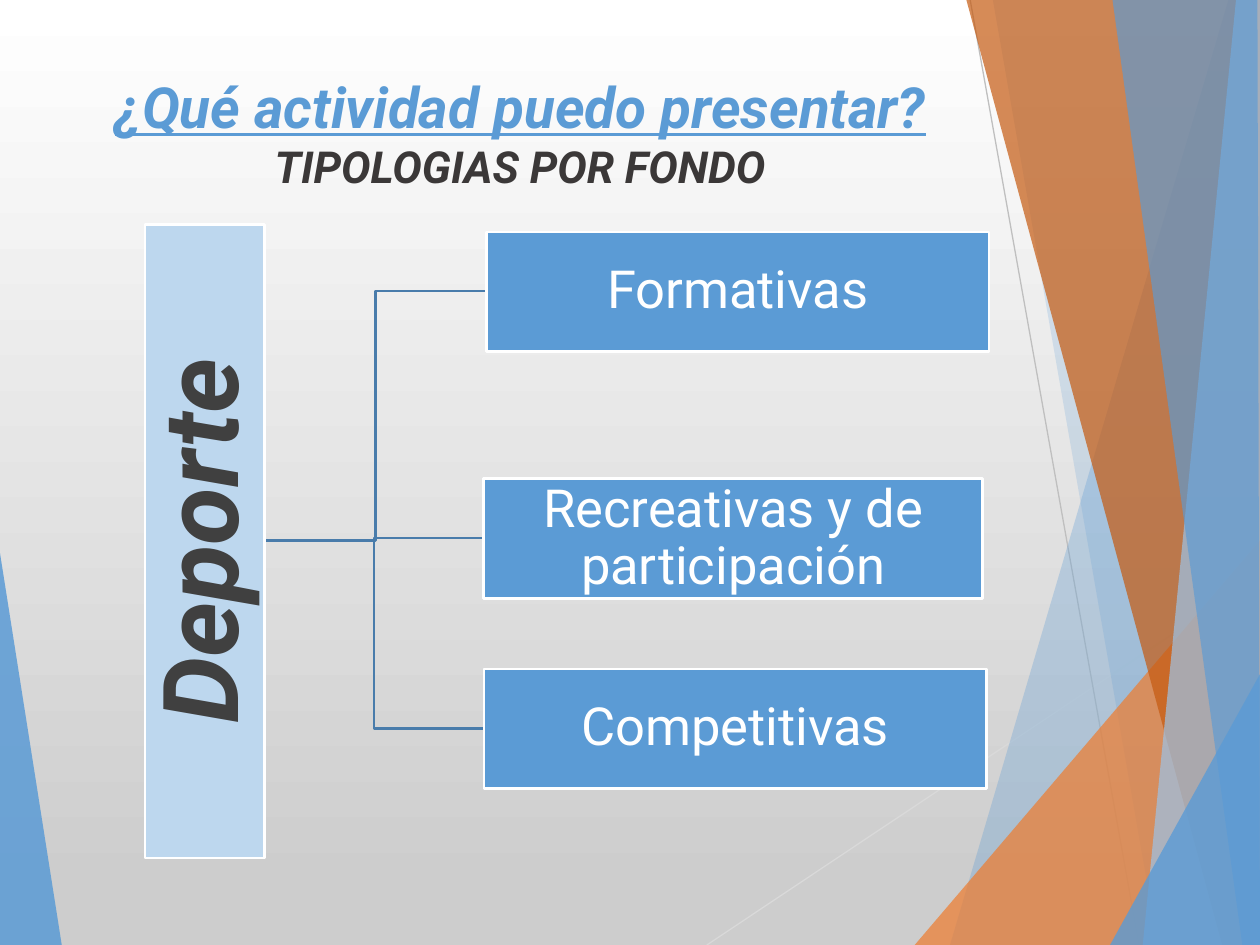
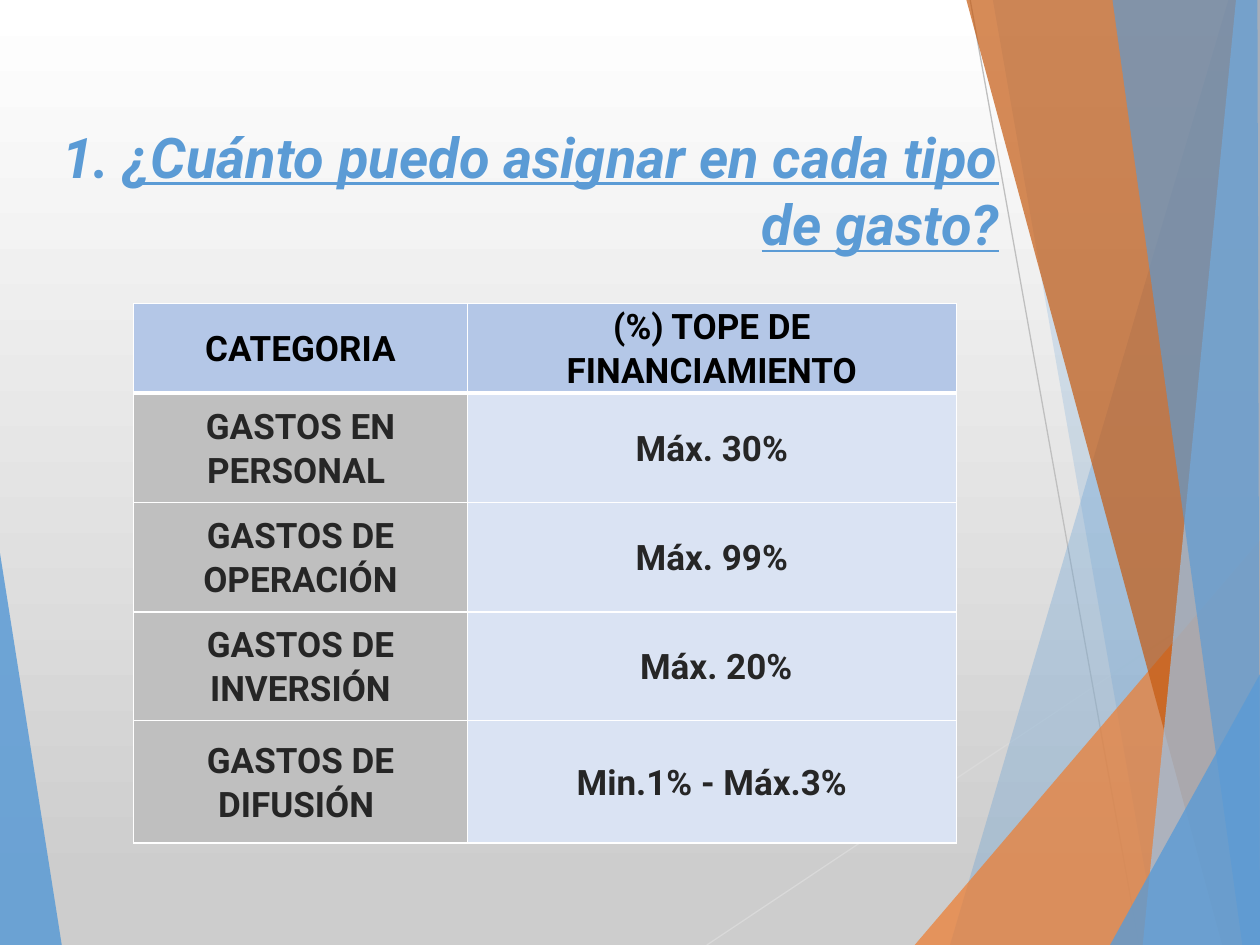
from dataclasses import dataclass

from pptx import Presentation
from pptx.dml.color import RGBColor
from pptx.enum.shapes import MSO_CONNECTOR, MSO_SHAPE
from pptx.enum.text import MSO_ANCHOR, MSO_AUTO_SIZE, PP_ALIGN
from pptx.oxml.ns import qn
from pptx.util import Pt
from lxml.etree import SubElement

EMU_PER_PX = 9144
SLIDE_WIDTH, SLIDE_HEIGHT = 1000, 750
TITLE_ONLY_LAYOUT = 5


@dataclass(frozen=True)
class Theme:
    font: str = "Roboto"
    white: str = "FFFFFF"
    black: str = "000000"
    background_end: str = "CDCDCD"
    blue: str = "5B9BD5"
    light_blue: str = "9DC3E6"
    pale_blue: str = "BDD7EE"
    orange: str = "ED7D31"
    dark_orange: str = "C55A11"
    branch: str = "497CAB"
    subtitle: str = "3B3838"
    root_text: str = "404040"
    cell_text: str = "262626"
    header_fill: str = "B4C7E7"
    category_fill: str = "BFBFBF"
    limit_fill: str = "DAE3F3"
    light_line: str = "D9D9D9"
    gray_line: str = "BFBFBF"
    title_size: float = 32
    first_title_size: float = 32.4
    subtitle_size: float = 25.2
    root_size: float = 60
    box_size: float = 30
    table_size: float = 20


THEME = Theme()

BACKDROP_LINES = [
    ((561, 750), (1000, 457), THEME.light_line),
    ((770, 0), (904, 750), THEME.gray_line),
]
LEFT_BAND = ([(0, 439), (49, 750), (0, 750)], THEME.blue, 85)
RIGHT_BANDS = [
    ([(975, 0), (754, 750), (1000, 750), (1000, 0)], THEME.blue, 30),
    ([(788, 0), (919, 750), (1000, 750), (1000, 0)], THEME.blue, 20),
    ([(726, 750), (1000, 429), (1000, 750)], THEME.orange, 72),
    ([(767, 0), (970, 750), (1000, 750), (1000, 0)], THEME.dark_orange, 70),
    ([(981, 0), (907, 750), (1000, 750), (1000, 0)], THEME.light_blue, 70),
    ([(883, 0), (986, 750), (1000, 750), (998, 0)], THEME.blue, 65),
    ([(881, 750), (1000, 535), (1000, 750)], THEME.blue, 80),
]

ROOT_BOX = (-89, 382, 503, 95)
BRANCH_START = (210, 429)
ACTIVITIES = [
    ("Competitivas", (384, 531, 399, 95)),
    ("Recreativas y de participación", (384, 380, 396, 95)),
    ("Formativas", (386, 184, 399, 95)),
]

COLUMN_WIDTHS = [265, 388]
ROW_HEIGHTS = [71, 87, 87, 86, 97]
EXPENSE_LIMITS = [
    ("CATEGORIA", "(%) TOPE DE FINANCIAMIENTO"),
    ("GASTOS EN PERSONAL ", "Máx. 30%"),
    ("GASTOS DE OPERACIÓN", "Máx. 99%"),
    ("GASTOS DE INVERSIÓN", " Máx. 20%"),
    ("GASTOS DE\nDIFUSIÓN ", "Min.1% - Máx.3%"),
]


def px(*lengths):
    return [length * EMU_PER_PX for length in lengths]


def apply_format(target, values):
    for name, value in values.items():
        setattr(target, name, value)


def format_font(font, size, color, **styles):
    apply_format(font, {"name": THEME.font, "size": Pt(size), **styles})
    font.color.rgb = RGBColor.from_string(color)


def fill_solid(fill, color, opacity=100):
    fill.solid()
    fill.fore_color.rgb = RGBColor.from_string(color)
    if opacity < 100:
        color_element = fill._xPr.find(qn("a:solidFill"))[0]
        SubElement(color_element, qn("a:alpha"), val=str(opacity * 1000))


def set_background(presentation):
    fill = presentation.slide_master.background.fill
    fill.gradient()
    fill.gradient_angle = 270
    stops = [(0, THEME.white), (0.94, THEME.background_end)]
    for stop, (position, color) in zip(fill.gradient_stops, stops):
        stop.position = position
        stop.color.rgb = RGBColor.from_string(color)


def add_line(slide, kind, start, end, color, width):
    connector = slide.shapes.add_connector(kind, *px(*start, *end))
    connector.line.color.rgb = RGBColor.from_string(color)
    connector.line.width = Pt(width)
    SubElement(connector._element.spPr, qn("a:effectLst"))


def add_band(slide, points, color, opacity):
    builder = slide.shapes.build_freeform(*points[0], scale=EMU_PER_PX)
    builder.add_line_segments(points[1:], close=True)
    band = builder.convert_to_shape()
    band.shadow.inherit = False
    band.line.fill.background()
    fill_solid(band.fill, color, opacity)


def add_backdrop(slide):
    add_band(slide, *LEFT_BAND)
    for start, end, color in BACKDROP_LINES:
        add_line(slide, MSO_CONNECTOR.STRAIGHT, start, end, color, 0.75)
    for band in RIGHT_BANDS:
        add_band(slide, *band)


def set_title(slide, bounds, alignment, runs):
    title = slide.shapes.title
    slide.shapes._spTree.append(title._element)
    apply_format(title, dict(zip(("left", "top", "width", "height"), px(*bounds))))
    apply_format(title.text_frame, {
        "word_wrap": True,
        "auto_size": MSO_AUTO_SIZE.NONE,
        "vertical_anchor": MSO_ANCHOR.TOP,
    })
    paragraph = title.text_frame.paragraphs[0]
    paragraph.alignment = alignment
    for text, size, color, underline in runs:
        if text.startswith("\n"):
            paragraph.add_line_break()
        run = paragraph.add_run()
        run.text = text.strip("\n")
        format_font(run.font, size, color, bold=True, italic=True, underline=underline)


def add_slide(presentation, *title):
    slide = presentation.slides.add_slide(presentation.slide_layouts[TITLE_ONLY_LAYOUT])
    add_backdrop(slide)
    set_title(slide, *title)
    return slide


def add_box(slide, text, bounds, fill, size, color, margin, rotation=0, **styles):
    box = slide.shapes.add_shape(MSO_SHAPE.RECTANGLE, *px(*bounds))
    box.shadow.inherit = False
    box.rotation = rotation
    fill_solid(box.fill, fill)
    box.line.color.rgb = RGBColor.from_string(THEME.white)
    box.line.width = Pt(1.5)
    frame = box.text_frame
    sides = ("margin_left", "margin_top", "margin_right", "margin_bottom")
    apply_format(frame, {
        "word_wrap": True,
        "vertical_anchor": MSO_ANCHOR.MIDDLE,
        **dict.fromkeys(sides, px(margin)[0]),
    })
    paragraph = frame.paragraphs[0]
    paragraph.text = text
    apply_format(paragraph, {"alignment": PP_ALIGN.CENTER, "line_spacing": 0.9})
    format_font(paragraph.runs[0].font, size, color, **styles)


def add_activity_tree(slide):
    for _, (left, top, _, height) in ACTIVITIES:
        end = (left, top + height // 2)
        add_line(slide, MSO_CONNECTOR.ELBOW, BRANCH_START, end, THEME.branch, 1.5)
    add_box(slide, "Deporte", ROOT_BOX, THEME.pale_blue, THEME.root_size,
            THEME.root_text, 4, rotation=270, bold=True, italic=True)
    for text, bounds in ACTIVITIES:
        add_box(slide, text, bounds, THEME.blue, THEME.box_size, THEME.white, 2)


def set_cell_borders(cell, widths):
    properties = cell._tc.get_or_add_tcPr()
    for position, (side, width) in enumerate(widths.items()):
        line = SubElement(properties, qn(f"a:{side}"), w=str(Pt(width)))
        fill = SubElement(line, qn("a:solidFill"))
        SubElement(fill, qn("a:srgbClr"), val=THEME.white)
        properties.insert(position, line)


def format_cell(cell, text, fill, color, top_border, bottom_border):
    margin = px(2)[0]
    apply_format(cell, {
        "text": text,
        "vertical_anchor": MSO_ANCHOR.MIDDLE,
        "margin_left": margin,
        "margin_right": margin,
        "margin_top": 0,
        "margin_bottom": 0,
    })
    for paragraph in cell.text_frame.paragraphs:
        apply_format(paragraph, {"alignment": PP_ALIGN.CENTER, "line_spacing": 1.07})
        format_font(paragraph.runs[0].font, THEME.table_size, color, bold=True)
    fill_solid(cell.fill, fill)
    set_cell_borders(cell, {"lnL": 1, "lnR": 1, "lnT": top_border, "lnB": bottom_border})


def add_expense_table(slide):
    bounds = px(106, 241, sum(COLUMN_WIDTHS), sum(ROW_HEIGHTS))
    table = slide.shapes.add_table(len(ROW_HEIGHTS), len(COLUMN_WIDTHS), *bounds).table
    table.horz_banding = False
    for column, width in zip(table.columns, px(*COLUMN_WIDTHS)):
        column.width = width
    for row, height in zip(table.rows, px(*ROW_HEIGHTS)):
        row.height = height
    for row_index, texts in enumerate(EXPENSE_LIMITS):
        is_header = row_index == 0
        fills = [THEME.header_fill] * 2 if is_header else [THEME.category_fill, THEME.limit_fill]
        color = THEME.black if is_header else THEME.cell_text
        for column_index, (text, fill) in enumerate(zip(texts, fills)):
            format_cell(table.cell(row_index, column_index), text, fill, color,
                        3 if row_index == 1 else 1, 3 if is_header else 1)


def main():
    presentation = Presentation()
    presentation.slide_width, presentation.slide_height = px(SLIDE_WIDTH, SLIDE_HEIGHT)
    set_background(presentation)

    activities_slide = add_slide(presentation, (43, 52, 740, 144), PP_ALIGN.CENTER, [
        ("¿Qué actividad puedo presentar?", THEME.first_title_size, THEME.blue, True),
        ("\nTIPOLOGIAS POR FONDO", THEME.subtitle_size, THEME.subtitle, False),
    ])
    add_activity_tree(activities_slide)

    expenses_slide = add_slide(presentation, (0, 92, 803, 134), PP_ALIGN.RIGHT, [
        ("1. ", THEME.title_size, THEME.blue, False),
        ("¿Cuánto puedo asignar en cada tipo de gasto?", THEME.title_size, THEME.blue, True),
    ])
    add_expense_table(expenses_slide)

    presentation.save("out.pptx")


if __name__ == "__main__":
    main()
